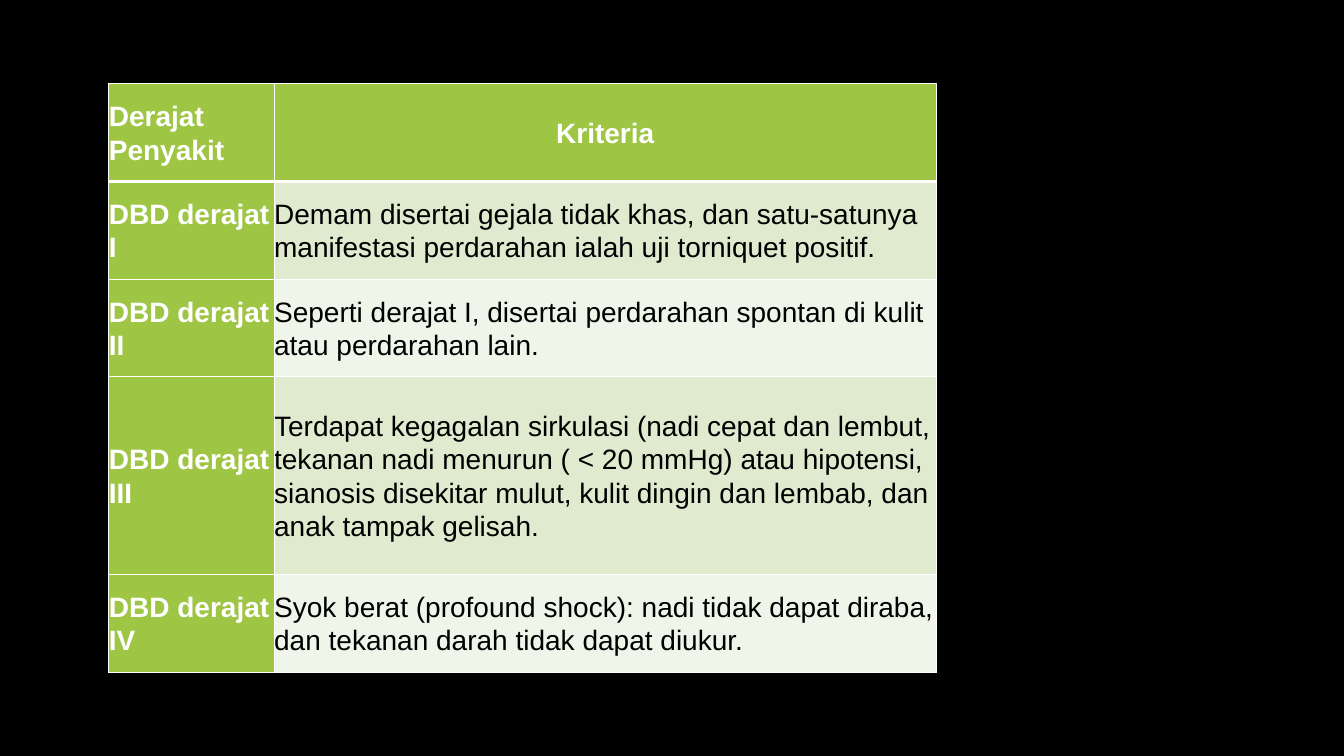
import pptx
import pptx.dml.color
import pptx.enum.text
import pptx.oxml
import pptx.oxml.ns
import pptx.util
from pptx.util import Pt

GREEN, PALE_GREEN, PALEST_GREEN = "9EC544", "DFEACF", "F0F5E9"
WHITE, BLACK = "FFFFFF", "000000"

COLUMN_WIDTHS = [118.08, 473.04]
ROW_HEIGHTS = [69.84, 69.84, 69.84, 141.12, 69.84]
DEGREES = [
    ("Derajat Penyakit", "Kriteria"),
    ("DBD derajat I", "Demam disertai gejala tidak khas, dan satu-satunya "
     "manifestasi perdarahan ialah uji torniquet positif."),
    ("DBD derajat II", "Seperti derajat I, disertai perdarahan spontan di kulit "
     "atau perdarahan lain."),
    ("DBD derajat III", "Terdapat kegagalan sirkulasi (nadi cepat dan lembut, "
     "tekanan nadi menurun ( < 20 mmHg) atau hipotensi, sianosis disekitar mulut, "
     "kulit dingin dan lembab, dan anak tampak gelisah."),
    ("DBD derajat IV", "Syok berat (profound shock): nadi tidak dapat diraba, "
     "dan tekanan darah tidak dapat diukur."),
]


def color(hex_string):
    return pptx.dml.color.RGBColor.from_string(hex_string)


class SlideBuilder:
    font_name = "Arial"
    font_size = 20
    line_spacing = 1.07

    def __init__(self, slide):
        self.slide = slide

    def background(self, fill_color):
        fill = self.slide.background.fill
        fill.solid()
        fill.fore_color.rgb = color(fill_color)

    def table(self, left, top, column_widths, row_heights, rows):
        """Add a table with a header row and a header column."""
        table = self.slide.shapes.add_table(
            len(rows), len(column_widths), Pt(left), Pt(top),
            Pt(sum(column_widths)), Pt(sum(row_heights))).table
        for column, width in zip(table.columns, column_widths):
            column.width = Pt(width)
        for row, height in zip(table.rows, row_heights):
            row.height = Pt(height)
        for row_index, texts in enumerate(rows):
            for column_index, text in enumerate(texts):
                is_header = row_index == 0 or column_index == 0
                band = PALE_GREEN if row_index % 2 else PALEST_GREEN
                cell = table.cell(row_index, column_index)
                self.borders(cell, top=3 if row_index == 1 else 1,
                             bottom=3 if row_index == 0 else 1)
                self.cell(cell, text, GREEN if is_header else band, is_header)
        return table

    def cell(self, cell, text, fill_color, is_header):
        cell.fill.solid()
        cell.fill.fore_color.rgb = color(fill_color)
        cell.margin_left = cell.margin_right = 0
        cell.margin_top = cell.margin_bottom = 0
        cell.vertical_anchor = pptx.enum.text.MSO_ANCHOR.MIDDLE
        paragraph = cell.text_frame.paragraphs[0]
        paragraph.text = text
        paragraph.line_spacing = self.line_spacing
        font = paragraph.runs[0].font
        font.name = self.font_name
        font.size = Pt(self.font_size)
        font.bold = is_header
        font.color.rgb = color(WHITE if is_header else BLACK)

    def borders(self, cell, top, bottom):
        """Draw white cell borders; call before the cell gets its fill."""
        properties = cell._tc.get_or_add_tcPr()
        for side, width in (("L", 1), ("R", 1), ("T", top), ("B", bottom)):
            properties.append(pptx.oxml.parse_xml(
                f'<a:ln{side} {pptx.oxml.ns.nsdecls("a")} w="{Pt(width)}">'
                f'<a:solidFill><a:srgbClr val="{WHITE}"/></a:solidFill>'
                f'</a:ln{side}>'))


def main():
    presentation = pptx.Presentation()
    presentation.slide_width = Pt(960)
    presentation.slide_height = Pt(540)
    blank_layout = presentation.slide_layouts[6]
    builder = SlideBuilder(presentation.slides.add_slide(blank_layout))
    builder.background(BLACK)
    table = builder.table(77.76, 59.76, COLUMN_WIDTHS, ROW_HEIGHTS, DEGREES)
    criteria_heading = table.cell(0, 1).text_frame.paragraphs[0]
    criteria_heading.alignment = pptx.enum.text.PP_ALIGN.CENTER
    presentation.save("out.pptx")


if __name__ == "__main__":
    main()
